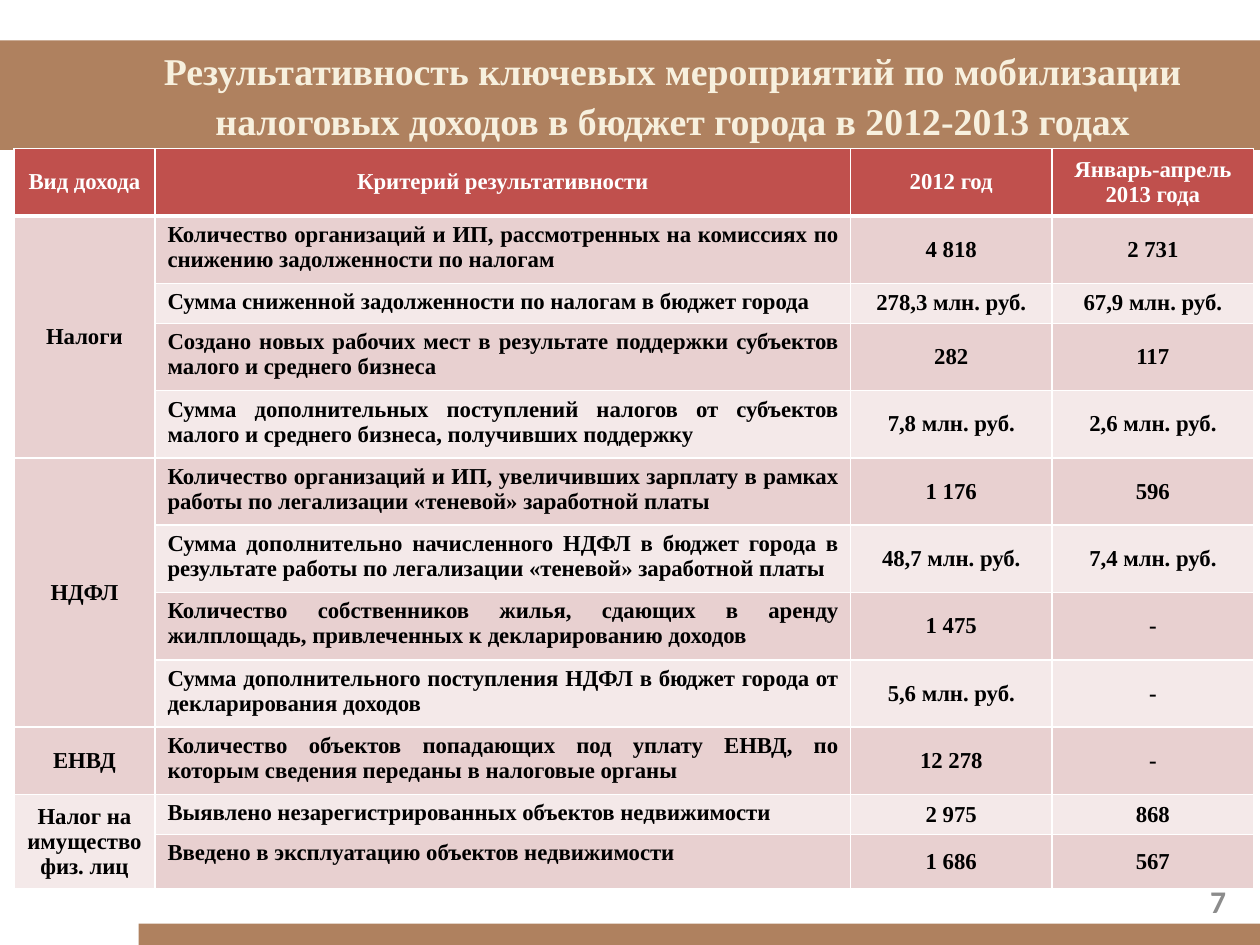
from lxml import etree
from pptx import Presentation, util as u
from pptx.dml.color import RGBColor
from pptx.enum import shapes, text
from pptx.oxml.ns import qn

SERIF = "Times New Roman"
BROWN, RED, WHITE = "AF815F", "C0504D", "FFFFFF"
BANDS = ["F4E9E9", "E8D0D0"]
COLUMNS = [1.12, 5.52, 1.6, 1.6]
HEIGHTS = [0.53, 0.5, 0.3] + [0.53] * 7 + [0.31, 0.43]
HEADER = ["Вид дохода", "Критерий результативности", "2012 год", "Январь-апрель\n2013 года"]
GROUPS = [
    ("Налоги", [
        ("Количество организаций и ИП, рассмотренных на комиссиях по снижению задолженности по налогам",
         "4 818", "2 731"),
        ("Сумма сниженной задолженности по налогам в бюджет города",
         "278,3 млн. руб.", "67,9 млн. руб."),
        ("Создано новых рабочих мест в результате поддержки субъектов малого и среднего бизнеса",
         "282", "117"),
        ("Сумма дополнительных поступлений налогов от субъектов малого и среднего бизнеса, получивших поддержку",
         "7,8 млн. руб.", "2,6 млн. руб."),
    ]),
    ("НДФЛ", [
        ("Количество организаций и ИП, увеличивших зарплату в рамках работы по легализации «теневой» заработной платы",
         "1 176", "596"),
        ("Сумма дополнительно начисленного НДФЛ в бюджет города в результате работы по легализации «теневой» заработной платы",
         "48,7 млн. руб.", "7,4 млн. руб."),
        ("Количество собственников жилья, сдающих в аренду жилплощадь, привлеченных к декларированию доходов",
         "1 475", "-"),
        ("Сумма дополнительного поступления НДФЛ в бюджет города от декларирования доходов",
         "5,6 млн. руб.", "-"),
    ]),
    ("ЕНВД", [
        ("Количество объектов попадающих под уплату ЕНВД, по которым сведения переданы в налоговые органы",
         "12 278", "-"),
    ]),
    ("Налог на имущество физ. лиц", [
        ("Выявлено незарегистрированных объектов недвижимости", "2 975", "868"),
        ("Введено в эксплуатацию объектов недвижимости", "1 686", "567"),
    ]),
]


def color(value):
    """Turn a hex string into a colour."""
    return RGBColor.from_string(value)


def write(frame, words, size=13, font=SERIF, ink="000000", align="CENTER", spacing=None):
    """Write bold text into a frame, one paragraph for each line."""
    frame.word_wrap = True
    for index, line in enumerate(words.split("\n")):
        para = frame.paragraphs[0] if index == 0 else frame.add_paragraph()
        para.alignment = getattr(text.PP_ALIGN, align)
        if spacing:
            para.line_spacing = spacing
        span = para.add_run()
        span.text = line
        span.font.size = u.Pt(size)
        span.font.name = font
        span.font.bold = True
        span.font.color.rgb = color(ink)


def add_band(page, box):
    """Draw a plain brown band."""
    band = page.shapes.add_shape(shapes.MSO_SHAPE.RECTANGLE, *map(u.Inches, box))
    band.shadow.inherit = False
    band.fill.solid()
    band.fill.fore_color.rgb = color(BROWN)
    band.line.fill.background()


def add_label(page, box, words, **style):
    """Place a vertically centred text box."""
    frame = page.shapes.add_textbox(*map(u.Inches, box)).text_frame
    frame.vertical_anchor = text.MSO_ANCHOR.MIDDLE
    write(frame, words, **style)


def add_borders(cell, bottom):
    """Give a cell white borders with the bottom width in points."""
    properties = cell._tc.get_or_add_tcPr()
    for index, (side, width) in enumerate(zip("LRTB", [1, 1, 1, bottom])):
        line = etree.Element(qn(f"a:ln{side}"), w=str(u.Pt(width)))
        fill = etree.SubElement(line, qn("a:solidFill"))
        etree.SubElement(fill, qn("a:srgbClr"), val=WHITE)
        properties.insert(index, line)


def fill_cell(cell, words, fill, bottom=1, middle=True, **style):
    """Fill, outline and write one table cell."""
    cell.fill.solid()
    cell.fill.fore_color.rgb = color(fill)
    add_borders(cell, bottom)
    cell.vertical_anchor = text.MSO_ANCHOR.MIDDLE if middle else text.MSO_ANCHOR.TOP
    if words:
        write(cell.text_frame, words, **style)


def add_results(page, box):
    """Build the results table with a merged first cell for each tax."""
    frame = page.shapes.add_table(len(HEIGHTS), len(COLUMNS), *map(u.Inches, box))
    table = frame.table
    for column, width in zip(table.columns, COLUMNS):
        column.width = u.Inches(width)
    for row, height in zip(table.rows, HEIGHTS):
        row.height = u.Inches(height)
    for index, heading in enumerate(HEADER):
        fill_cell(table.cell(0, index), heading, RED, bottom=3, ink=WHITE)
    row = 1
    for tax, measures in GROUPS:
        first, last = row, row + len(measures) - 1
        for criterion, *values in measures:
            fill = BANDS[row % 2]
            fill_cell(table.cell(row, 0), tax if row == first else "", fill)
            fill_cell(table.cell(row, 1), criterion, fill, middle=False, align="JUSTIFY")
            for index, value in enumerate(values, 2):
                fill_cell(table.cell(row, index), value, fill)
            row += 1
        if last > first:
            table.cell(first, 0).merge(table.cell(last, 0))


def main():
    """Build and save the slide."""
    deck = Presentation()
    deck.slide_width, deck.slide_height = u.Inches(10), u.Inches(7.5)
    page = deck.slides.add_slide(deck.slide_layouts[6])
    add_band(page, (1.1, 7.33, 8.94, 0.2))
    add_band(page, (0, 0.32, 10.04, 0.87))
    add_label(page, (0.83, 0.31, 9.02, 0.86),
              "Результативность ключевых мероприятий по мобилизации "
              "налоговых доходов в бюджет города в 2012-2013 годах",
              size=21.6, ink="F7F0DE", spacing=1.1)
    add_label(page, (7.5, 6.95, 2.33, 0.4), "7",
              size=18, font="Calibri", ink="8C8C8C", align="RIGHT")
    add_results(page, (0.11, 1.18, sum(COLUMNS), sum(HEIGHTS)))
    deck.save("out.pptx")


if __name__ == "__main__":
    main()
